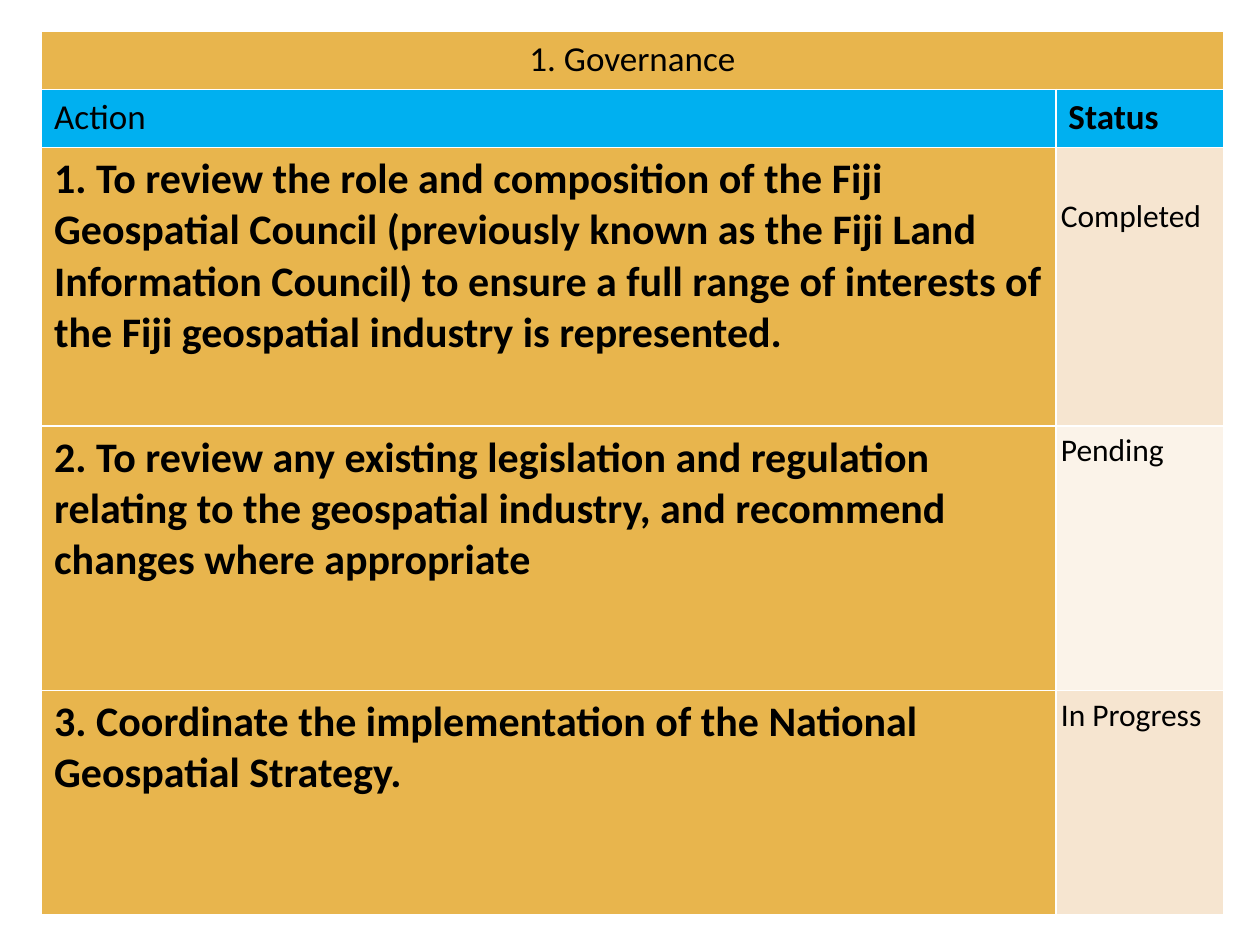
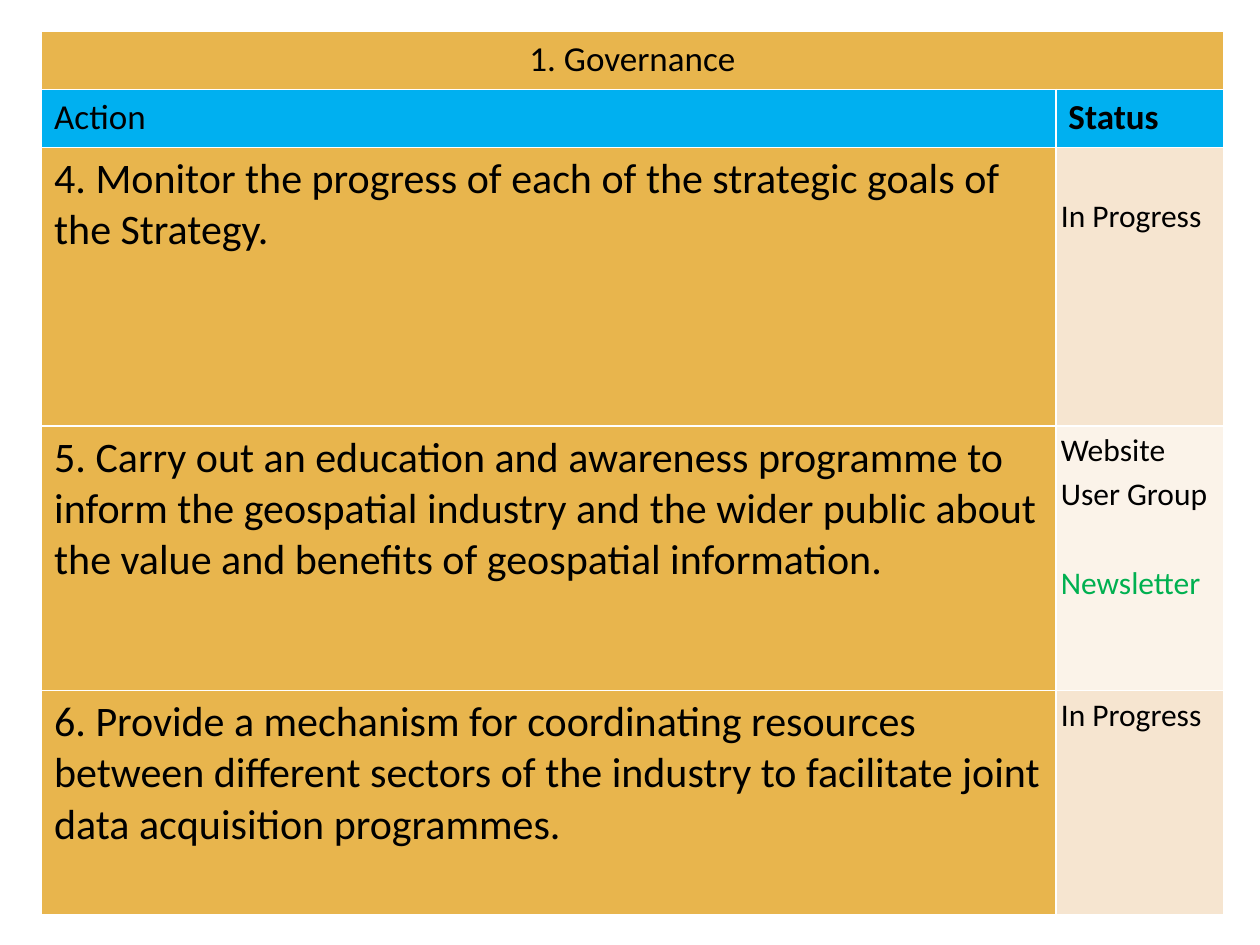
from dataclasses import dataclass

from lxml import etree
from pptx import Presentation
from pptx.dml.color import RGBColor
from pptx.enum.text import PP_ALIGN
from pptx.oxml.ns import qn
from pptx.util import Inches, Pt

LEFT, CENTER = PP_ALIGN.LEFT, PP_ALIGN.CENTER
BLANK_LAYOUT = 6


@dataclass(frozen=True)
class Theme:
    font: str = "Calibri"
    ink: str = "000000"
    done: str = "00B050"
    gold: str = "E8B54D"
    blue: str = "00B0F0"
    bands: tuple = ("F6E5D0", "FBF3E9")
    border: str = "FFFFFF"
    border_width: float = 1
    header_size: int = 20
    action_size: int = 24
    status_size: int = 18
    status_leading: float = 1.15
    status_gap: float = 0.35


THEME = Theme()
PAGE_SIZE = (Inches(10), Inches(7.5))
TABLE_BOX = (Inches(0.33), Inches(0.25), Inches(9.38), Inches(7.01))
COLUMNS = (8.05, 1.33)
ROWS = (0.46, 0.46, 2.21, 2.1, 1.78)

SLIDES = (
    (True, (
        ("1. To review the role and composition of the Fiji Geospatial Council (previously known as "
         "the Fiji Land Information Council) to ensure a full range of interests of the Fiji "
         "geospatial industry is represented.", ("Completed",)),
        ("2. To review any existing legislation and regulation relating to the geospatial industry, "
         "and recommend changes where appropriate", ("Pending",)),
        ("3. Coordinate the implementation of the National Geospatial Strategy.", ("In Progress",)),
    )),
    (False, (
        ("4. Monitor the progress of each of the strategic goals of the Strategy.", ("In Progress",)),
        ("5. Carry out an education and awareness programme to inform the geospatial industry and "
         "the wider public about the value and benefits of geospatial information.",
         ("Website", "User Group", "Newsletter")),
        ("6. Provide a mechanism for coordinating resources between different sectors of the "
         "industry to facilitate joint data acquisition programmes.", ("In Progress",)),
    )),
)


def apply_format(target, values):
    for name, value in values.items():
        setattr(target, name, value)


def paint_cell(cell, color):
    properties = cell._tc.get_or_add_tcPr()
    for side in ("lnL", "lnR", "lnT", "lnB"):
        line = etree.SubElement(properties, qn(f"a:{side}"), w=str(Pt(THEME.border_width)))
        fill = etree.SubElement(line, qn("a:solidFill"))
        etree.SubElement(fill, qn("a:srgbClr"), val=THEME.border)
    cell.fill.solid()
    cell.fill.fore_color.rgb = RGBColor.from_string(color)


def write_para(para, text, size, bold=False, color=THEME.ink, **layout):
    apply_format(para, layout)
    span = para.add_run()
    span.text = text
    apply_format(span.font, {"name": THEME.font, "size": Pt(size), "bold": bold})
    span.font.color.rgb = RGBColor.from_string(color)


def write_cell(cell, text, fill, size, bold=False, align=LEFT):
    paint_cell(cell, fill)
    write_para(cell.text_frame.paragraphs[0], text, size, bold, alignment=align)


def write_status(cell, statuses, fill, top):
    paint_cell(cell, fill)
    apply_format(cell, {"margin_left": Inches(0.04), "margin_right": Inches(0.04),
                        "margin_top": top, "margin_bottom": 0})
    frame = cell.text_frame
    for index, status in enumerate(statuses):
        para = frame.add_paragraph() if index else frame.paragraphs[0]
        newsletter = status == "Newsletter"
        write_para(para, status, THEME.status_size,
                   color=THEME.done if newsletter else THEME.ink,
                   line_spacing=THEME.status_leading,
                   space_before=Inches(THEME.status_gap) if newsletter else Pt(0))


def add_grid(page, box):
    table = page.shapes.add_table(len(ROWS), len(COLUMNS), *box).table
    apply_format(table, {"first_row": False, "horz_banding": False})
    for column, share in zip(table.columns, COLUMNS):
        column.width = int(box[2] * share / sum(COLUMNS))
    for row, share in zip(table.rows, ROWS):
        row.height = int(box[3] * share / sum(ROWS))
    return table


def write_header(table):
    table.cell(0, 0).merge(table.cell(0, 1))
    write_cell(table.cell(0, 0), "1. Governance", THEME.gold, THEME.header_size, align=CENTER)
    write_cell(table.cell(1, 0), "Action", THEME.blue, THEME.header_size)
    write_cell(table.cell(1, 1), "Status", THEME.blue, THEME.header_size, bold=True)


def add_action_slide(deck, bold, actions):
    page = deck.slides.add_slide(deck.slide_layouts[BLANK_LAYOUT])
    table = add_grid(page, TABLE_BOX)
    write_header(table)
    for index, (action, statuses) in enumerate(actions):
        row = index + 2
        write_cell(table.cell(row, 0), action, THEME.gold, THEME.action_size, bold)
        top = 0 if index else Inches(THEME.status_gap)
        write_status(table.cell(row, 1), statuses, THEME.bands[index % 2], top)


def main():
    deck = Presentation()
    deck.slide_width, deck.slide_height = PAGE_SIZE
    for bold, actions in SLIDES:
        add_action_slide(deck, bold, actions)
    deck.save("out.pptx")


if __name__ == "__main__":
    main()
